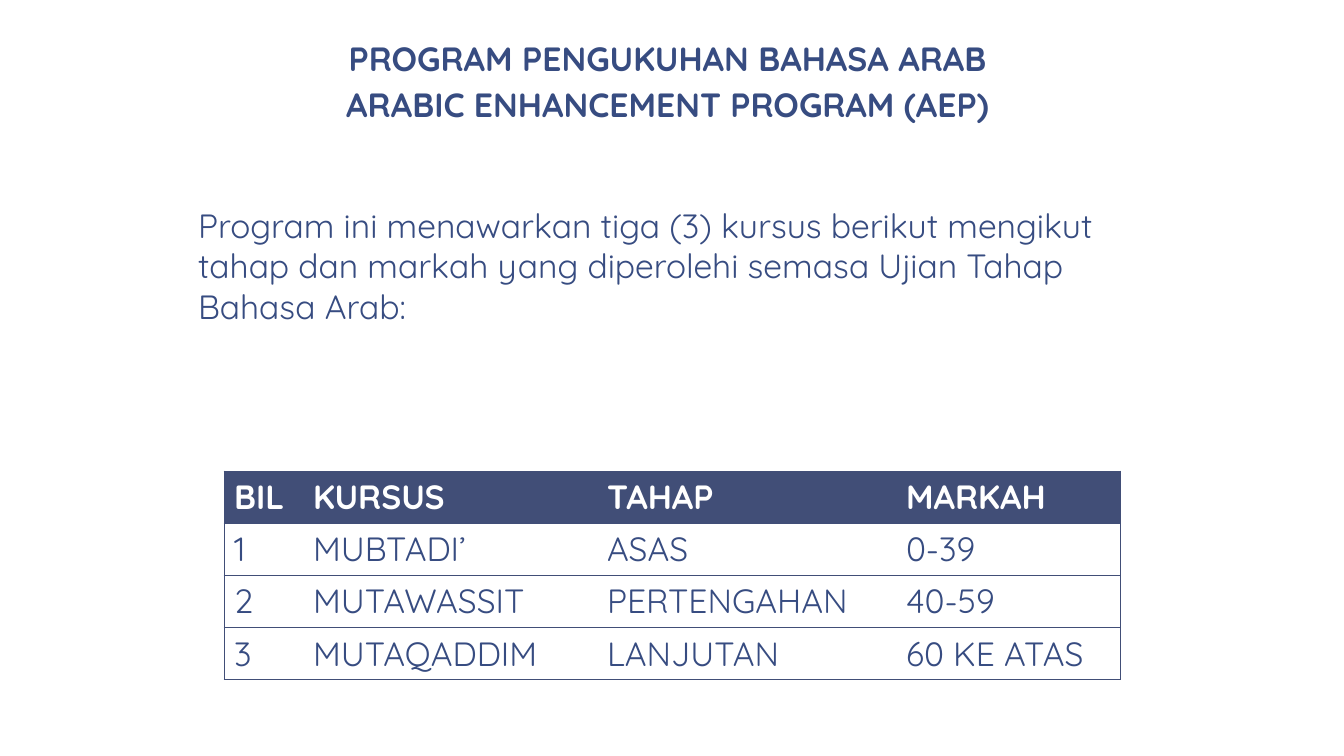
"""Build the slide on the Arabic Enhancement Program and its three courses."""
from lxml import etree
from pptx import Presentation
from pptx import util as u
from pptx.dml.color import RGBColor
from pptx.enum import text
from pptx.oxml import ns

INK = RGBColor(0x37, 0x4C, 0x81)
NAVY = RGBColor(0x41, 0x4E, 0x77)
WHITE = RGBColor(0xFF, 0xFF, 0xFF)

COURSES = [
    ("BIL", "KURSUS", "TAHAP", "MARKAH"),
    ("1", "MUBTADI’", "ASAS", "0-39"),
    ("2", "MUTAWASSIT", "PERTENGAHAN", "40-59"),
    ("3", "MUTAQADDIM", "LANJUTAN", "60 KE ATAS"),
]


def px(length):
    return u.Emu(round(length * 12192000 / 1344))


def write(frame, lines, *, font="Quicksand", size=24, color=INK, bold=False,
          align=text.PP_ALIGN.LEFT, gap=0):
    for index, line in enumerate(lines):
        paragraph = frame.paragraphs[0] if index == 0 else frame.add_paragraph()
        properties = paragraph._p.get_or_add_pPr()
        properties.set("marL", "0")
        properties.set("indent", "0")
        etree.SubElement(properties, ns.qn("a:buNone"))
        paragraph.alignment = align
        paragraph.line_spacing = 1.0
        paragraph.space_before = u.Pt(gap if index else 0)
        run = paragraph.add_run()
        run.text = line
        run.font.name = font
        run.font.size = u.Pt(size)
        run.font.bold = bold
        run.font.color.rgb = color


class Deck:
    """Holds the style and the current slide."""

    def __init__(self, width, height):
        self.presentation = Presentation()
        self.presentation.slide_width = px(width)
        self.presentation.slide_height = px(height)
        self.border_color = NAVY
        self.border_width = u.Pt(0.5)
        self.slide = None

    def new_slide(self):
        self.slide = self.presentation.slides.add_slide(self.presentation.slide_layouts[1])
        self.slide.background.fill.solid()
        self.slide.background.fill.fore_color.rgb = WHITE

    def placeholder(self, index, left, top, width, height, lines, **style):
        holder = self.slide.placeholders[index]
        holder.left, holder.top = px(left), px(top)
        holder.width, holder.height = px(width), px(height)
        frame = holder.text_frame
        frame.word_wrap = True
        frame.auto_size = text.MSO_AUTO_SIZE.NONE
        frame.vertical_anchor = text.MSO_ANCHOR.TOP
        write(frame, lines, **style)

    def border(self, cell, side, visible):
        line = etree.SubElement(cell._tc.get_or_add_tcPr(), ns.qn(f"a:ln{side}"))
        line.set("w", str(int(self.border_width)))
        if visible:
            fill = etree.SubElement(line, ns.qn("a:solidFill"))
            etree.SubElement(fill, ns.qn("a:srgbClr")).set("val", str(self.border_color))
        else:
            etree.SubElement(line, ns.qn("a:noFill"))

    def table(self, left, top, widths, row_height, rows):
        last = len(widths) - 1
        grid = self.slide.shapes.add_table(
            len(rows), len(widths), px(left), px(top),
            px(sum(widths)), px(row_height * len(rows))).table
        for column, width in zip(grid.columns, widths):
            column.width = px(width)
        for r, values in enumerate(rows):
            grid.rows[r].height = px(row_height)
            for c, value in enumerate(values):
                cell = grid.cell(r, c)
                for side, visible in (("L", c == 0), ("R", c == last), ("T", True), ("B", True)):
                    self.border(cell, side, visible)
                if r == 0:
                    cell.fill.solid()
                    cell.fill.fore_color.rgb = NAVY
                else:
                    cell.fill.background()
                write(cell.text_frame, [value], color=INK if r else WHITE, bold=r == 0)


def main():
    deck = Deck(1344, 756)
    deck.new_slide()
    deck.placeholder(
        0, 92, 33, 1151, 99,
        ["PROGRAM PENGUKUHAN BAHASA ARAB", "ARABIC ENHANCEMENT PROGRAM (AEP)"],
        bold=True, align=text.PP_ALIGN.CENTER, gap=4)
    deck.placeholder(
        1, 188, 200, 966, 132,
        ["Program ini menawarkan tiga (3) kursus berikut mengikut tahap dan markah "
         "yang diperolehi semasa Ujian Tahap Bahasa Arab:"])
    deck.table(224, 471, (79, 294, 299, 224), 50, COURSES)
    deck.presentation.save("out.pptx")


if __name__ == "__main__":
    main()
